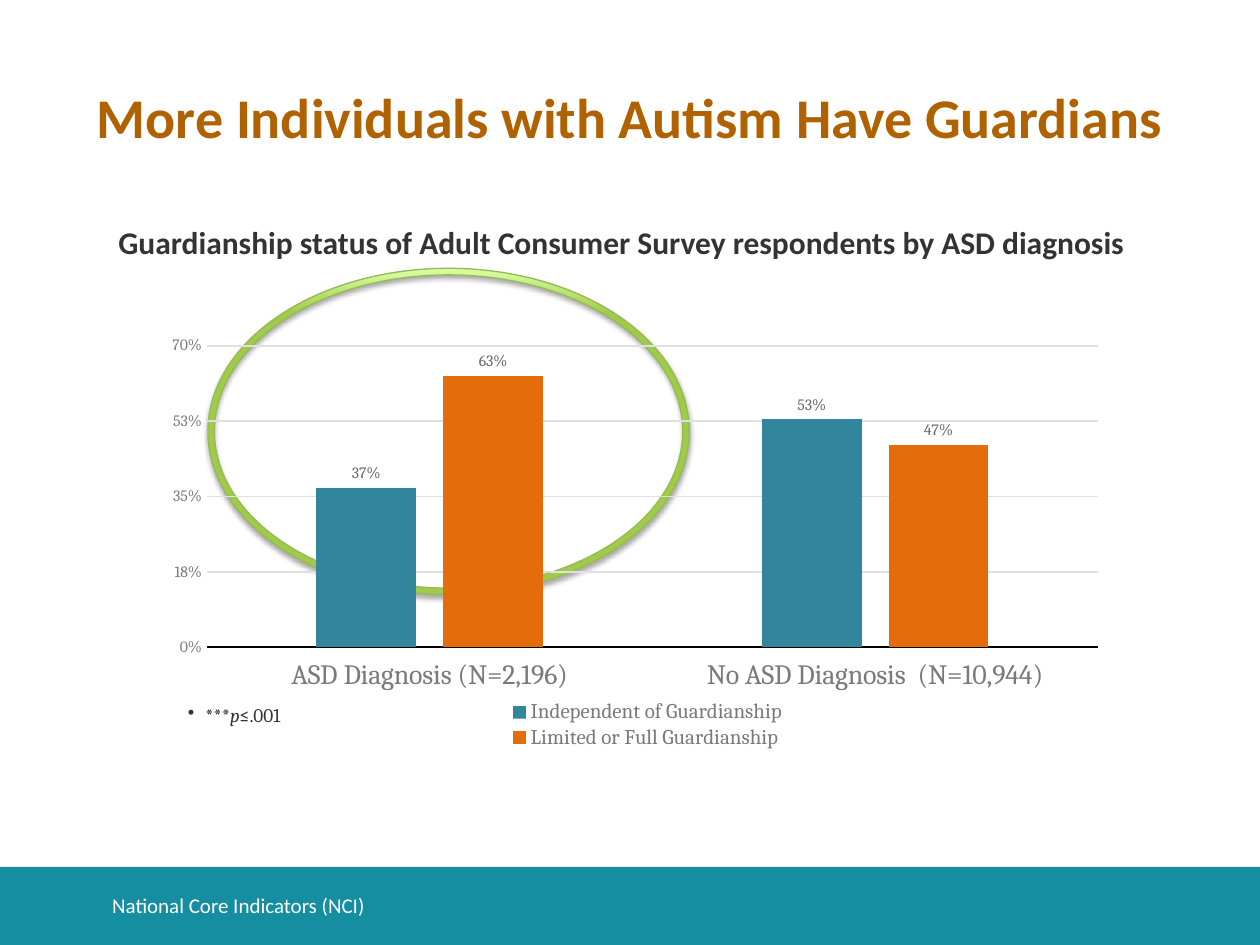
"""Build a slide that compares guardianship by autism diagnosis."""
from dataclasses import dataclass

from pptx import Presentation
from pptx.chart.data import CategoryChartData
from pptx.dml.color import RGBColor
from pptx.enum.chart import (XL_CHART_TYPE, XL_LABEL_POSITION, XL_LEGEND_POSITION,
                             XL_TICK_LABEL_POSITION, XL_TICK_MARK)
from pptx.enum.shapes import MSO_SHAPE
from pptx.enum.text import MSO_ANCHOR, MSO_AUTO_SIZE, PP_ALIGN
from pptx.oxml import parse_xml
from pptx.oxml.ns import nsdecls, qn
from pptx.util import Inches, Pt

WHITE = RGBColor(0xFF, 0xFF, 0xFF)
BLACK = RGBColor(0x00, 0x00, 0x00)
TEAL = RGBColor(0x16, 0x8E, 0xA2)
BROWN = RGBColor(0xB0, 0x61, 0x00)
DARK = RGBColor(0x33, 0x33, 0x33)
GREY = RGBColor(0x7A, 0x7A, 0x7A)
LABEL = RGBColor(0x66, 0x66, 0x66)
GRID = RGBColor(0xE0, 0xE0, 0xE0)
GREEN = RGBColor(0xA0, 0xCA, 0x4A)
LIME = RGBColor(0xDA, 0xFF, 0xA3)
EDGE = RGBColor(0x98, 0xB9, 0x55)
BLUE = RGBColor(0x31, 0x85, 0x9C)
ORANGE = RGBColor(0xE4, 0x6C, 0x0A)
SANS, SERIF = "Calibri", "Cambria"
WIDE, HIGH = Inches(10), Inches(7.5)


@dataclass
class Box:
    """Place on the slide, in percent of its width and height."""
    left: float
    top: float
    width: float
    height: float

    def spots(self) -> tuple:
        """Return left, top, width and height as lengths."""
        return (int(WIDE * self.left / 100), int(HIGH * self.top / 100),
                int(WIDE * self.width / 100), int(HIGH * self.height / 100))


@dataclass
class Group:
    """One series of bars."""
    name: str
    shares: tuple
    color: RGBColor


CATS = ("ASD Diagnosis (N=2,196)", "No ASD Diagnosis  (N=10,944)")
GROUPS = (Group("Independent of Guardianship", (0.37, 0.53), BLUE),
          Group("Limited or Full Guardianship", (0.63, 0.47), ORANGE))


def style(font, size: float, color: RGBColor, name: str, bold: bool = False) -> None:
    """Set size, colour, face and weight of a font."""
    font.size, font.name, font.bold = Pt(size), name, bold
    font.color.rgb = color


def add_text(slide, box: Box, text: str, inset: float):
    """Add a wrapped text box and return its shape."""
    shape = slide.shapes.add_textbox(*box.spots())
    frame = shape.text_frame
    frame.word_wrap = True
    frame.margin_left = frame.margin_right = Inches(inset)
    frame.margin_top = frame.margin_bottom = Inches(inset)
    frame.text = text
    return shape


def add_title(slide, box: Box, text: str) -> None:
    """Move and format the title."""
    title = slide.shapes.title
    title.left, title.top, title.width, title.height = box.spots()
    frame = title.text_frame
    frame.text = text
    frame.auto_size = MSO_AUTO_SIZE.NONE
    frame.vertical_anchor = MSO_ANCHOR.MIDDLE
    frame.paragraphs[0].alignment = PP_ALIGN.CENTER
    style(frame.paragraphs[0].font, 32, BROWN, SANS, True)


def add_band(slide, box: Box) -> None:
    """Add the footer band."""
    band = slide.shapes.add_shape(MSO_SHAPE.RECTANGLE, *box.spots())
    band.shadow.inherit = False
    band.fill.solid()
    band.fill.fore_color.rgb = TEAL
    band.line.fill.background()


def add_ring(slide, box: Box) -> None:
    """Add the shaded ring with its soft shadow."""
    ring = slide.shapes.add_shape(MSO_SHAPE.DONUT, *box.spots())
    ring.adjustments[0] = 0.02
    ring.fill.gradient()
    ring.fill.gradient_angle = 90
    for stop, place, color in zip(ring.fill.gradient_stops, (0.86, 1), (GREEN, LIME)):
        stop.position = place
        stop.color.rgb = color
    ring.line.color.rgb = EDGE
    ring.line.width = Pt(0.75)
    ring.shadow.inherit = False
    glow = parse_xml(
        f'<a:outerShdw {nsdecls("a")} blurRad="{Pt(3)}" dist="{Pt(1.8)}" dir="5400000" '
        'rotWithShape="0"><a:srgbClr val="000000"><a:alpha val="35000"/></a:srgbClr>'
        '</a:outerShdw>')
    ring._element.spPr.find(qn("a:effectLst")).append(glow)


def set_layout(part, index: int, box: tuple, inner: bool = False) -> None:
    """Fix the place of a chart part, in shares of the chart."""
    for old in part.findall(qn("c:layout")):
        part.remove(old)
    aim = '<c:layoutTarget val="inner"/>' if inner else ""
    sides = "".join(f'<c:{key} val="{val}"/>' for key, val in zip("xywh", box))
    part.insert(index, parse_xml(
        f'<c:layout {nsdecls("c")}><c:manualLayout>{aim}<c:xMode val="edge"/>'
        f'<c:yMode val="edge"/>{sides}</c:manualLayout></c:layout>'))


def clear_fill(chart) -> None:
    """Make the chart and its plot see-through."""
    space = chart._chartSpace
    blank = (f'<c:spPr {nsdecls("c", "a")}><a:noFill/>'
             '<a:ln><a:noFill/></a:ln></c:spPr>')
    space.chart.addnext(parse_xml(blank))
    space.chart.plotArea.append(parse_xml(blank))


def format_axes(chart) -> None:
    """Format both axes and the grid lines."""
    base, scale = chart.category_axis, chart.value_axis
    for axis, size in ((base, 16), (scale, 9)):
        axis.major_tick_mark = axis.minor_tick_mark = XL_TICK_MARK.NONE
        style(axis.tick_labels.font, size, GREY, SERIF)
    base.tick_label_position = XL_TICK_LABEL_POSITION.LOW
    base.format.line.color.rgb = BLACK
    base.format.line.width = Pt(1)
    scale.minimum_scale, scale.maximum_scale, scale.major_unit = 0, 0.7, 0.175
    scale.tick_labels.number_format = "0%"
    scale.tick_labels.number_format_is_linked = False
    scale.format.line.fill.background()
    scale.major_gridlines.format.line.color.rgb = GRID
    scale.major_gridlines.format.line.width = Pt(1)


def add_bars(slide, box: Box) -> None:
    """Add the column chart with labels and legend."""
    data = CategoryChartData(number_format="0%")
    data.categories = CATS
    for group in GROUPS:
        data.add_series(group.name, group.shares)
    chart = slide.shapes.add_chart(XL_CHART_TYPE.COLUMN_CLUSTERED, *box.spots(), data).chart
    chart.has_title = False
    style(chart.font, 10, DARK, SERIF)
    plot = chart.plots[0]
    plot.gap_width, plot.overlap, plot.vary_by_categories = 219, -27, False
    for series, group in zip(plot.series, GROUPS):
        series.format.fill.solid()
        series.format.fill.fore_color.rgb = group.color
        labels = series.data_labels
        labels.show_value = True
        labels.position = XL_LABEL_POSITION.OUTSIDE_END
        labels.number_format, labels.number_format_is_linked = "0%", False
        style(labels.font, 9, LABEL, SERIF)
    format_axes(chart)
    chart.has_legend = True
    legend = chart.legend
    legend.position = XL_LEGEND_POSITION.BOTTOM
    legend.include_in_layout = True
    style(legend.font, 12, GREY, SERIF)
    set_layout(legend._element, 1, (0.37, 0.89, 0.3, 0.11))
    set_layout(chart._chartSpace.chart.plotArea, 0, (0.05, 0.14, 0.95, 0.64), True)
    clear_fill(chart)


def add_note(slide, box: Box) -> None:
    """Add the bulleted note on significance."""
    line = add_text(slide, box, "", 0.05).text_frame.paragraphs[0]
    props = line._p.get_or_add_pPr()
    props.set("marL", str(Inches(0.14)))
    props.set("indent", str(-Inches(0.14)))
    props.append(parse_xml(f'<a:buChar {nsdecls("a")} char="•"/>'))
    style(line.font, 11, DARK, SERIF)
    for text, face, slant in (("***", SERIF, False), ("p", SERIF, True),
                              ("≤", SANS, False), (".001", SERIF, False)):
        run = line.add_run()
        run.text = text
        run.font.name, run.font.italic = face, slant


def main() -> None:
    """Build and save the slide."""
    deck = Presentation()
    deck.slide_width, deck.slide_height = WIDE, HIGH
    slide = deck.slides.add_slide(deck.slide_layouts[5])
    add_band(slide, Box(0, 91.73, 100, 8.27))
    foot = add_text(slide, Box(8.9, 93.87, 74, 3.87), "National Core Indicators (NCI)", 0)
    foot.text_frame.vertical_anchor = MSO_ANCHOR.MIDDLE
    style(foot.text_frame.paragraphs[0].font, 12, WHITE, SANS)
    add_title(slide, Box(5, 4, 90, 16.67), "More Individuals with Autism Have Guardians")
    head = add_text(slide, Box(8.9, 22.93, 86.1, 9.07),
                    "Guardianship status of Adult Consumer Survey respondents by ASD diagnosis",
                    0.05)
    style(head.text_frame.paragraphs[0].font, 18, DARK, SANS, True)
    add_ring(slide, Box(16.5, 28.4, 38.2, 34.53))
    add_bars(slide, Box(12.7, 29.6, 74.5, 49.87))
    add_note(slide, Box(14.4, 73.73, 37.5, 5.2))
    deck.save("out.pptx")


if __name__ == "__main__":
    main()
